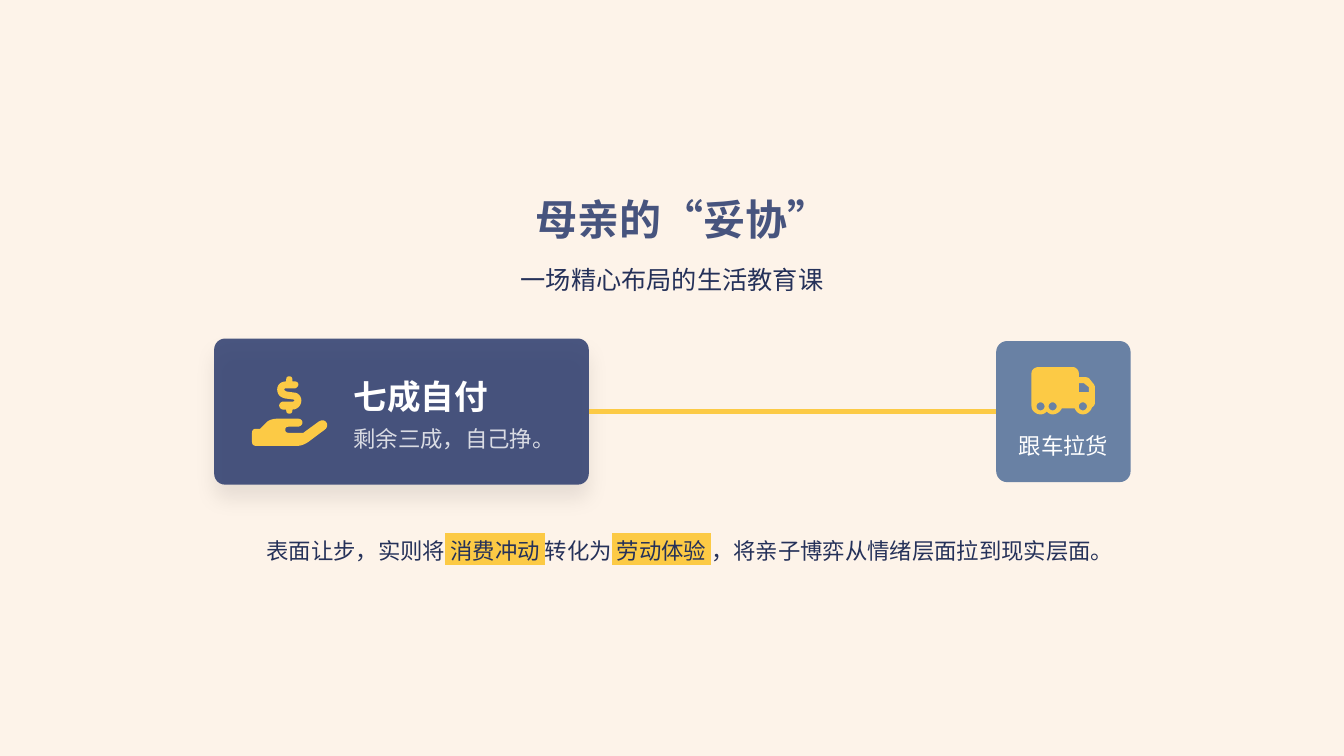
"""Build a slide on a mother's compromise as a lesson in earning."""
import pptx
import pptx.dml.color
import pptx.enum.shapes
import pptx.enum.text
import pptx.oxml.ns
import pptx.util
from lxml import etree

HUES = {"cream": "FDF3E9", "navy": "2A3A6D", "ink": "253159",
        "gold": "FCCA45", "steel": "6981A4", "white": "FFFFFF", "black": "000000"}
FONT = "Noto Sans CJK SC"
COLS, ROWS = 16, 9
FINE = 100
STEPS = 6

COIN = ("M 37 0 C 35 0 34 1 34 3 L 34 5 C 29 5 25 8 25 13 C 25 18 28 21 33 22 "
        "L 41 23 C 41 23 42 23 42 24 C 42 25 41 25 40 25 L 31 25 "
        "C 29 25 27 27 27 29 C 27 31 29 33 31 33 L 34 33 L 34 34 "
        "C 34 36 35 37 37 37 C 39 37 40 36 40 34 L 40 33 C 45 33 49 29 49 24 "
        "C 49 20 46 16 41 16 L 34 15 C 33 14 32 14 32 13 C 32 12 33 12 34 12 "
        "L 42 12 C 44 12 46 10 46 8 C 46 6 44 5 42 5 L 40 5 L 40 3 C 40 1 39 0 37 0")
HAND = ("M 14 46 L 8 52 L 4 52 C 1 52 0 54 0 56 L 0 65 C 0 67 1 69 4 69 L 45 69 "
        "C 49 69 53 67 56 65 L 72 53 C 75 51 75 48 74 46 C 72 43 69 43 66 45 "
        "L 51 56 L 36 56 C 34 56 33 55 33 53 C 33 51 34 50 36 50 L 45 50 "
        "C 48 50 50 48 50 46 C 50 43 48 42 45 42 L 26 42 C 21 42 17 43 14 46")
TRUCK = ("M 7 0 C 3 0 0 3 0 6 L 0 39 C 0 43 4 47 9 47 C 11 47 14 46 15 44 "
         "C 17 46 19 47 21 47 C 25 47 29 44 30 41 L 43 41 C 44 44 47 47 51 47 "
         "C 55 47 59 44 60 40 C 62 39 63 37 63 35 L 63 20 C 63 19 62 17 61 16 "
         "L 57 11 C 55 10 54 10 52 10 L 47 10 L 47 6 C 47 3 44 0 41 0 L 7 0")
PANE = "M 47 16 L 52 16 L 57 20 L 57 25 L 47 25 L 47 16"


def wheel(x, y=39, r=4, k=2.2):
    return (f"M {x} {y - r} C {x + k} {y - r} {x + r} {y - k} {x + r} {y} "
            f"C {x + r} {y + k} {x + k} {y + r} {x} {y + r} "
            f"C {x - k} {y + r} {x - r} {y + k} {x - r} {y} "
            f"C {x - r} {y - k} {x - k} {y - r} {x} {y - r}")


def trace(line):
    marks = iter(line.split())
    dots = []
    for mark in marks:
        count = 3 if mark == "C" else 1
        ends = [(float(next(marks)) * FINE, float(next(marks)) * FINE)
                for _ in range(count)]
        if mark == "C":
            bend = [dots[-1]] + ends
            for step in range(1, STEPS + 1):
                t = step / STEPS
                parts = ((1 - t) ** 3, 3 * t * (1 - t) ** 2, 3 * t * t * (1 - t), t ** 3)
                dots.append(tuple(sum(p * dot[axis] for p, dot in zip(parts, bend))
                                  for axis in (0, 1)))
        else:
            dots += ends
    return dots


def sub(node, tag, **attrs):
    return etree.SubElement(node, pptx.oxml.ns.qn(tag),
                            {key: str(val) for key, val in attrs.items()})


def paint(fill, node, hue, alpha=100):
    fill.solid()
    fill.fore_color.rgb = pptx.dml.color.RGBColor.from_string(HUES[hue])
    if alpha < 100:
        tint = node.find(".//" + pptx.oxml.ns.qn("a:srgbClr"))
        sub(tint, "a:alpha", val=alpha * 1000)


def write(frame, text, size=16, hue="ink", alpha=100, bold=False, align="LEFT", space=1.3):
    frame.word_wrap = True
    frame.auto_size = pptx.enum.text.MSO_AUTO_SIZE.NONE
    frame.vertical_anchor = pptx.enum.text.MSO_ANCHOR.MIDDLE
    frame.margin_left = frame.margin_right = frame.margin_top = frame.margin_bottom = 0
    para = frame.paragraphs[0]
    para.alignment = getattr(pptx.enum.text.PP_ALIGN, align)
    para.line_spacing = space
    for index, piece in enumerate(text.split("|")):
        run = para.add_run()
        run.text = piece
        font = run.font
        font.size, font.bold = pptx.util.Pt(size), bold
        paint(font.fill, run._r, hue, alpha)
        props = run._r.get_or_add_rPr()
        if index % 2:
            sub(sub(props, "a:highlight"), "a:srgbClr", val=HUES["gold"])
        font.name = FONT
        sub(props, "a:ea", typeface=FONT)


class Deck:
    def __init__(self):
        self.show = pptx.Presentation()
        self.show.slide_width = pptx.util.Inches(13.33)
        self.show.slide_height = pptx.util.Inches(7.5)
        self.slide = self.show.slides.add_slide(self.show.slide_layouts[5])
        self.shapes = self.slide.shapes
        back = self.slide.background.fill
        back.solid()
        back.fore_color.rgb = pptx.dml.color.RGBColor.from_string(HUES["cream"])

    def grid(self, x, y):
        return (int(self.show.slide_width * x / COLS),
                int(self.show.slide_height * y / ROWS))

    def title(self, x, y, w, h, text, **style):
        head = self.shapes.title
        head.left, head.top = self.grid(x, y)
        head.width, head.height = self.grid(w, h)
        write(head.text_frame, text, **style)

    def label(self, x, y, w, h, text, **style):
        box = self.shapes.add_textbox(*self.grid(x, y), *self.grid(w, h))
        write(box.text_frame, text, **style)

    def card(self, x, y, w, h, hue, alpha=100, glow=False):
        kind = pptx.enum.shapes.MSO_SHAPE.ROUNDED_RECTANGLE
        box = self.shapes.add_shape(kind, *self.grid(x, y), *self.grid(w, h))
        box.adjustments[0] = 0.13 / min(w, h)
        paint(box.fill, box._element.spPr, hue, alpha)
        box.line.fill.background()
        box.shadow.inherit = False
        if glow:
            cast = sub(box._element.spPr.find(pptx.oxml.ns.qn("a:effectLst")),
                       "a:outerShdw", blurRad=pptx.util.Pt(15), dist=pptx.util.Pt(10),
                       dir=90 * 60000, algn="ctr", rotWithShape=0)
            sub(sub(cast, "a:srgbClr", val=HUES["black"]), "a:alpha", val=10000)
        return box

    def link(self, start, end, hue, width):
        kind = pptx.enum.shapes.MSO_CONNECTOR.STRAIGHT
        line = self.shapes.add_connector(kind, 0, 0, 0, 0)
        line.begin_connect(start, 3)
        line.end_connect(end, 1)
        paint(line.line.fill, line._element.spPr, hue)
        line.line.width = pptx.util.Pt(width)
        sub(line._element.spPr, "a:effectLst")

    def icon(self, x, y, hue, *lines):
        first, *rest = [trace(line) for line in lines]
        pen = self.shapes.build_freeform(*first[0], scale=pptx.util.Inches(0.01) / FINE)
        pen.add_line_segments(first[1:], close=True)
        for dots in rest:
            pen.move_to(*dots[0])
            pen.add_line_segments(dots[1:], close=True)
        form = pen.convert_to_shape(*self.grid(x, y))
        paint(form.fill, form._element.spPr, hue)
        form.line.fill.background()
        form.shadow.inherit = False


def main():
    deck = Deck()
    deck.title(6.25, 2.3, 3.74, 0.6, "母亲的“妥协”", size=30, hue="navy", alpha=85,
               bold=True, align="CENTER", space=1)
    deck.label(6.2, 3.04, 3.74, 0.47, "一场精心布局的生活教育课", size=18)
    pay = deck.card(2.55, 4.03, 4.46, 1.74, "navy", alpha=85, glow=True)
    haul = deck.card(11.86, 4.06, 1.6, 1.68, "steel")
    deck.link(pay, haul, "gold", 4)
    deck.icon(3, 4.48, "gold", COIN, HAND)
    deck.label(4.21, 4.43, 2.6, 0.53, "七成自付", size=24, hue="white", bold=True, space=1.1)
    deck.label(4.21, 4.97, 2.53, 0.4, "剩余三成，自己挣。", hue="white", alpha=80)
    deck.icon(12.28, 4.37, "gold", TRUCK, PANE, *map(wheel, (9, 21, 51)))
    deck.label(12.06, 5.06, 1.2, 0.4, "跟车拉货", hue="white", align="CENTER")
    deck.label(2.82, 6.3, 10.79, 0.4,
               "表面让步，实则将| 消费冲动 |转化为| 劳动体验 |，将亲子博弈从情绪层面拉到现实层面。",
               align="CENTER")
    deck.show.save("out.pptx")


if __name__ == "__main__":
    main()
